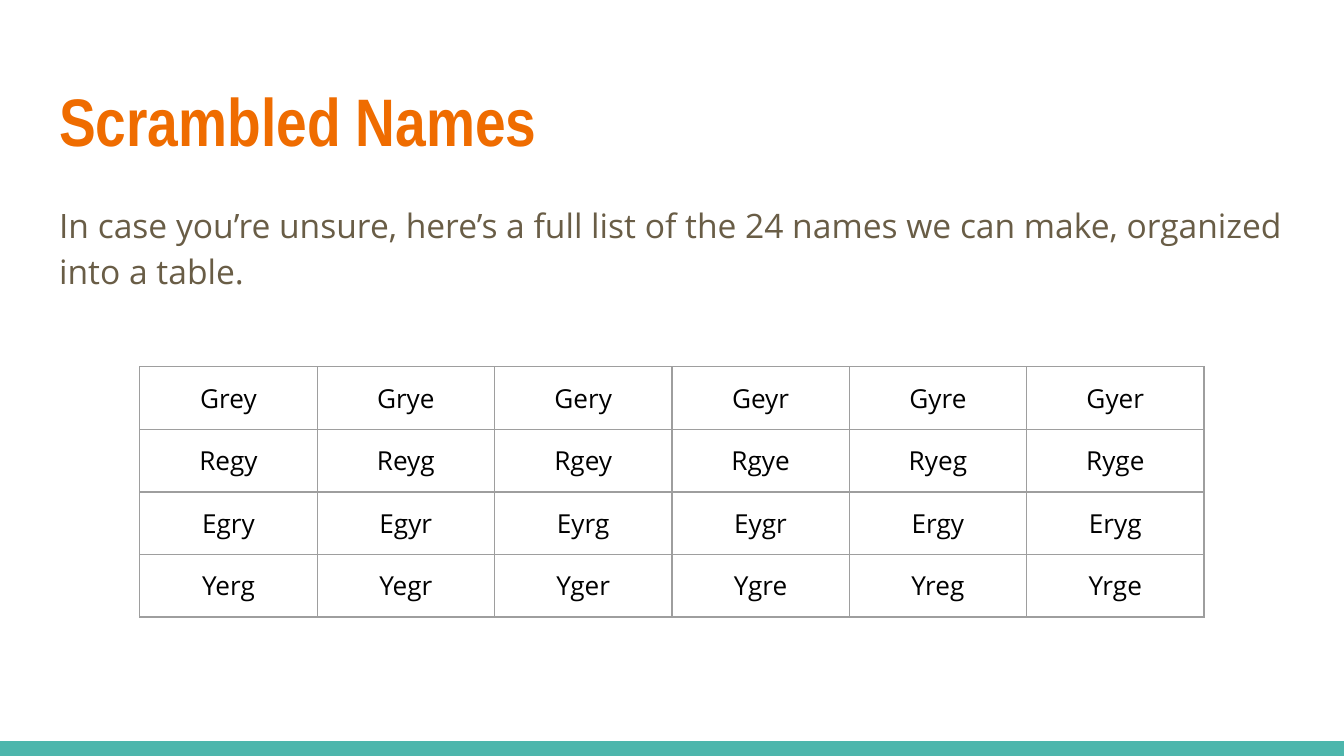
from lxml.etree import SubElement
from pptx import Presentation
from pptx.dml.color import RGBColor
from pptx.enum.shapes import MSO_SHAPE as Shape
from pptx.enum.text import MSO_ANCHOR as Anchor, MSO_AUTO_SIZE as AutoSize, PP_ALIGN as Align
from pptx.oxml.ns import qn
from pptx.util import Inches, Pt

WIDTH = 10
HEIGHT = WIDTH * 9 / 16
MARGIN = 0.34
INSET = Inches(0.1)
COLORS = {"heading": "EF6C00", "body": "695D46", "cell": "000000",
          "grid": "9E9E9E", "stripe": "4DB6AC"}
NAMES = [
    "Grey Grye Gery Geyr Gyre Gyer".split(),
    "Regy Reyg Rgey Rgye Ryeg Ryge".split(),
    "Egry Egyr Eyrg Eygr Ergy Eryg".split(),
    "Yerg Yegr Yger Ygre Yreg Yrge".split(),
]


def write(frame, text, font="Open Sans", size=18, color="body", bold=False,
          align=Align.LEFT, spacing=1.0, after=0):
    """Fill a text frame with one formatted paragraph."""
    paragraph = frame.paragraphs[0]
    paragraph.alignment = align
    paragraph.line_spacing = spacing
    paragraph.space_before, paragraph.space_after = Pt(0), Pt(after)
    run = paragraph.add_run()
    run.text = text
    run.font.name, run.font.size, run.font.bold = font, Pt(size), bold
    run.font.color.rgb = RGBColor.from_string(COLORS[color])
    return paragraph


def place(holder, box):
    """Move a placeholder into a box and give it even insets."""
    holder.left, holder.top, holder.width, holder.height = map(Inches, box)
    frame = holder.text_frame
    frame.word_wrap, frame.auto_size = True, AutoSize.NONE
    frame.vertical_anchor = Anchor.TOP
    frame.margin_left = frame.margin_right = INSET
    frame.margin_top = frame.margin_bottom = INSET
    return frame


def add_stripe(slide, box):
    stripe = slide.shapes.add_shape(Shape.RECTANGLE, *map(Inches, box))
    stripe.shadow.inherit = False
    stripe.fill.solid()
    stripe.fill.fore_color.rgb = RGBColor.from_string(COLORS["stripe"])
    stripe.line.fill.background()


def add_heading(slide, box):
    write(place(slide.shapes.title, box), "Scrambled Names",
          font="Arial Narrow", size=36, color="heading", bold=True)


def add_intro(slide, box):
    intro = write(place(slide.placeholders[1], box),
                  "In case you’re unsure, here’s a full list of the 24 names "
                  "we can make, organized into a table.",
                  spacing=1.15, after=16)
    # Plain paragraph: no bullet, no hanging indent
    properties = intro._p.get_or_add_pPr()
    properties.set("marL", "0")
    properties.set("indent", "0")
    SubElement(properties, qn("a:buNone"))


def outline(cell):
    """Draw a thin line on all four sides of a cell."""
    properties = cell._tc.get_or_add_tcPr()
    for position, side in enumerate(("a:lnL", "a:lnR", "a:lnT", "a:lnB")):
        border = SubElement(properties, qn(side), w=str(Pt(0.75)))
        fill = SubElement(border, qn("a:solidFill"))
        SubElement(fill, qn("a:srgbClr"), val=COLORS["grid"])
        properties.insert(position, border)  # borders come before the fill


def add_names_table(slide, box):
    table = slide.shapes.add_table(len(NAMES), len(NAMES[0]), *map(Inches, box)).table
    table.first_row = table.horz_banding = False
    for r, row in enumerate(NAMES):
        for c, name in enumerate(row):
            cell = table.cell(r, c)
            cell.margin_left = cell.margin_right = INSET
            cell.margin_top = cell.margin_bottom = INSET
            cell.fill.background()
            outline(cell)
            write(cell.text_frame, name, size=14, color="cell", align=Align.CENTER)


def main():
    deck = Presentation()
    deck.slide_width, deck.slide_height = Inches(WIDTH), Inches(HEIGHT)
    slide = deck.slides.add_slide(deck.slide_layouts[1])
    content_width = WIDTH - 2 * MARGIN
    columns, rows = len(NAMES[0]), len(NAMES)

    # Bottom stripe, heading, introduction, table
    add_stripe(slide, (0, HEIGHT - 0.11, WIDTH, 0.11))
    add_heading(slide, (MARGIN, 0.49, content_width, 0.77))
    add_intro(slide, (MARGIN, 1.38, content_width, 3.61))
    add_names_table(slide, (1.04, 2.73, columns * 1.32, rows * 0.42))
    deck.save("out.pptx")


if __name__ == "__main__":
    main()
